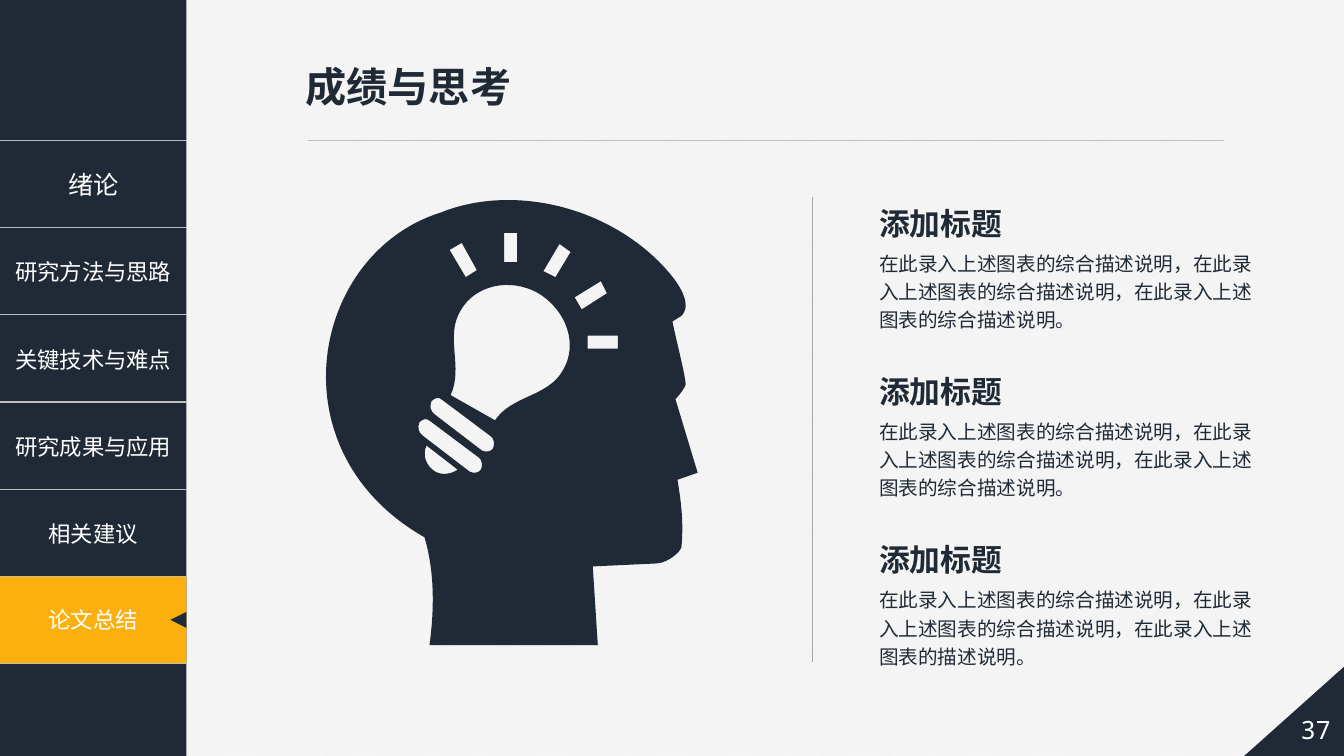
from dataclasses import dataclass

from lxml import etree
from pptx import Presentation
from pptx import util as u
from pptx.dml.color import RGBColor
from pptx.enum import dml, shapes, text
from pptx.oxml.ns import qn

NAVY, AMBER, WHITE = "202A36", "FCB00F", "FFFFFF"
PALE, SILVER, STEEL = "F2F2F2", "BFBFBF", "9DA8B1"
CJK = "Noto Sans CJK SC"
SIDEBAR_WIDTH = 1.85
ROW_TOP, ROW_HEIGHT = 1.39, 0.866

Point = tuple[float, float]
Segment = tuple[float, ...]
Box = tuple[float, float, float, float]


@dataclass(frozen=True)
class Section:
    heading: str
    body: str


@dataclass(frozen=True)
class Contour:
    """Closed outline: two numbers give a line, six a cubic curve."""
    start: Point
    segments: list[Segment]

    def shifted(self, dx: float, dy: float) -> "Contour":
        moved = [tuple(v + (dy if i % 2 else dx) for i, v in enumerate(segment))
                 for segment in self.segments]
        return Contour((self.start[0] + dx, self.start[1] + dy), moved)

    def vertices(self) -> list[Point]:
        return [(u.Inches(x), u.Inches(y)) for segment in self.segments
                for x, y in zip(segment[::2], segment[1::2])]


CHAPTERS = ["绪论", "研究方法与思路", "关键技术与难点", "研究成果与应用", "相关建议", "论文总结"]
PHRASE = "在此录入上述图表的综合描述说明，"
SECTIONS = [
    Section("添加标题", PHRASE * 2 + "在此录入上述图表的综合描述说明。"),
    Section("添加标题", PHRASE * 2 + "在此录入上述图表的综合描述说明。"),
    Section("添加标题", PHRASE * 2 + "在此录入上述图表的描述说明。"),
]

HEAD = Contour((4.26, 6.4), [
    (4.31, 6.04, 4.31, 5.66, 4.21, 5.33), (2.7, 4.47, 3.09, 2.51, 4.37, 2.11),
    (5.03, 1.84, 5.94, 2.01, 6.53, 2.59), (6.96, 3.02, 6.75, 3.14, 6.75, 3.14),
    (6.67, 3.19), (6.71, 3.39, 6.81, 3.77, 6.8, 3.82),
    (6.77, 3.89, 6.7, 3.96, 6.7, 3.96), (6.92, 4.69), (6.72, 4.76),
    (6.76, 5, 6.78, 5.19, 6.76, 5.42), (6.76, 5.47, 6.63, 5.58, 6.52, 5.59),
    (5.88, 5.62), (5.93, 6.4)])
BULB = Contour((5.34, 2.91), [
    (5.06, 2.75, 4.71, 2.83, 4.57, 3.08), (4.41, 3.34, 4.6, 3.64, 4.47, 3.92),
    (4.91, 4.17), (5.08, 3.92, 5.43, 3.94, 5.58, 3.68),
    (5.74, 3.42, 5.62, 3.08, 5.34, 2.91)])
SCREW_BAND = Contour((4.75, 4.54), [
    (4.27, 4.18), (4.23, 4.14, 4.19, 4.16, 4.16, 4.19),
    (4.14, 4.24, 4.15, 4.29, 4.19, 4.32), (4.66, 4.68),
    (4.7, 4.7, 4.75, 4.69, 4.77, 4.66), (4.79, 4.62, 4.78, 4.56, 4.75, 4.54)])
BULB_TIP = Contour((4.23, 4.42), [
    (4.19, 4.51, 4.22, 4.62, 4.32, 4.68), (4.39, 4.72, 4.48, 4.7, 4.54, 4.66)])
RAYS = [
    Contour((4.73, 2.68), [(4.58, 2.41), (4.46, 2.48), (4.62, 2.75)]),
    Contour((5.13, 2.6), [(5.13, 2.31), (5, 2.31), (5, 2.6)]),
    Contour((5.51, 2.75), [(5.66, 2.5), (5.55, 2.42), (5.39, 2.69)]),
    Contour((5.77, 3.07), [(6.02, 2.91), (5.96, 2.79), (5.7, 2.95)]),
    Contour((5.83, 3.46), [(6.13, 3.46), (6.13, 3.33), (5.83, 3.33)]),
]


def color(hex_value: str) -> RGBColor:
    return RGBColor.from_string(hex_value)


def write(frame, content: str, *, size: float, fill: str = NAVY, font: str = CJK,
          bold: bool = False, align=text.PP_ALIGN.LEFT, spacing: float = 1.0) -> None:
    paragraph = frame.paragraphs[0]
    paragraph.alignment = align
    paragraph.line_spacing = spacing
    run = paragraph.add_run()
    run.text = content
    run.font.size, run.font.bold, run.font.name = u.Pt(size), bold, font
    run.font.color.rgb = color(fill)
    east_asian = etree.SubElement(run.font._element, qn("a:ea"))
    east_asian.set("typeface", font)


def add_text(slide, box: Box, content: str, *, wrap: bool = True, **style) -> None:
    frame = slide.shapes.add_textbox(*map(u.Inches, box)).text_frame
    frame.word_wrap = wrap
    write(frame, content, **style)


def paint(shape, fill: str) -> None:
    shape.shadow.inherit = False
    shape.fill.solid()
    shape.fill.fore_color.rgb = color(fill)
    shape.line.fill.background()


def add_block(slide, kind, box: Box, fill: str = NAVY):
    shape = slide.shapes.add_shape(kind, *map(u.Inches, box))
    paint(shape, fill)
    return shape


def add_rule(slide, start: Point, end: Point, line_color: str, width: float) -> None:
    rule = slide.shapes.add_connector(
        shapes.MSO_CONNECTOR.STRAIGHT, *map(u.Inches, (*start, *end)))
    rule.line.color.rgb = color(line_color)
    rule.line.width = u.Pt(width)
    etree.SubElement(rule._element.spPr, qn("a:effectLst"))


def set_row_borders(cell) -> None:
    properties = cell._tc.get_or_add_tcPr()
    for position, side in enumerate("LRTB"):
        border = etree.Element(qn(f"a:ln{side}"), w=str(u.Pt(1)))
        if side in "TB":
            solid = etree.SubElement(border, qn("a:solidFill"))
            etree.SubElement(solid, qn("a:srgbClr"), val=SILVER)
        else:
            etree.SubElement(border, qn("a:noFill"))
        properties.insert(position, border)


def add_navigation(slide) -> None:
    add_block(slide, shapes.MSO_SHAPE.RECTANGLE, (0, 0, SIDEBAR_WIDTH, 7.5))
    table = slide.shapes.add_table(
        len(CHAPTERS), 1, 0, u.Inches(ROW_TOP), u.Inches(SIDEBAR_WIDTH),
        u.Inches(ROW_HEIGHT * len(CHAPTERS))).table
    centred = {"fill": WHITE, "align": text.PP_ALIGN.CENTER}
    for index, chapter in enumerate(CHAPTERS):
        table.rows[index].height = u.Inches(ROW_HEIGHT)
        cell = table.cell(index, 0)
        cell.fill.background()
        cell.vertical_anchor = text.MSO_ANCHOR.MIDDLE
        set_row_borders(cell)
        write(cell.text_frame, chapter, size=16 if index else 18, **centred)
    current = add_block(slide, shapes.MSO_SHAPE.RECTANGLE,
                        (0, 5.72, SIDEBAR_WIDTH, 0.86), AMBER)
    current.text_frame.vertical_anchor = text.MSO_ANCHOR.MIDDLE
    write(current.text_frame, CHAPTERS[-1], size=16, **centred)
    pointer = add_block(slide, shapes.MSO_SHAPE.ISOSCELES_TRIANGLE, (1.69, 6.07, 0.16, 0.16))
    pointer.rotation = 270


def bend(shape, contours: list[Contour]) -> None:
    """Turn each run of three vertices that belongs to a curve into one cubic."""
    vertices = list(shape._element.iter(qn("a:lnTo")))
    position = 0
    for segment in (s for contour in contours for s in contour.segments):
        count = len(segment) // 2
        group = vertices[position:position + count]
        position += count
        if count == 3:
            curve = etree.Element(qn("a:cubicBezTo"))
            group[0].addprevious(curve)
            for vertex in group:
                curve.append(vertex[0])
                vertex.getparent().remove(vertex)


def add_head(slide) -> None:
    contours = [HEAD, BULB, SCREW_BAND, SCREW_BAND.shifted(0.12, -0.21), BULB_TIP, *RAYS]
    builder = slide.shapes.build_freeform(*map(u.Inches, HEAD.start))
    for contour in contours:
        if contour is not HEAD:
            builder.move_to(*map(u.Inches, contour.start))
        # The builder closes without an extra vertex.
        builder.add_line_segments(contour.vertices(), close=True)
    head = builder.convert_to_shape()
    bend(head, contours)
    paint(head, NAVY)


def add_page_number(slide) -> None:
    corner = add_block(slide, shapes.MSO_SHAPE.RIGHT_TRIANGLE, (12.33, 6.58, 1.04, 0.93))
    corner._element.spPr.find(qn("a:xfrm")).set("flipH", "1")
    add_text(slide, (12.77, 7.04, 0.56, 0.4), "37", wrap=False, size=18, fill=WHITE,
             font="Noto Sans Mono", align=text.PP_ALIGN.CENTER)


def add_title(slide) -> None:
    title = slide.shapes.title
    title.left, title.top, title.width, title.height = map(u.Inches, (2.93, 0.56, 2.26, 0.59))
    frame = title.text_frame
    frame.word_wrap = False
    frame.auto_size = text.MSO_AUTO_SIZE.NONE
    frame.vertical_anchor = text.MSO_ANCHOR.TOP
    write(frame, "成绩与思考", size=29.4, font="Arial", bold=True)


def main() -> None:
    presentation = Presentation()
    presentation.slide_width, presentation.slide_height = u.Inches(13.33), u.Inches(7.5)
    slide = presentation.slides.add_slide(presentation.slide_layouts[5])
    background = slide.background.fill
    background.patterned()
    background.pattern = dml.MSO_PATTERN.LIGHT_UPWARD_DIAGONAL
    background.fore_color.rgb, background.back_color.rgb = color(WHITE), color(PALE)

    add_title(slide)
    add_navigation(slide)
    add_rule(slide, (3.05, ROW_TOP), (12.14, ROW_TOP), SILVER, 0.5)
    add_page_number(slide)
    add_rule(slide, (8.06, 1.95), (8.06, 6.57), STEEL, 1)
    for index, section in enumerate(SECTIONS):
        top = 1.98 + 1.67 * index
        add_text(slide, (8.62, top, 1.44, 0.47), section.heading, wrap=False, size=22, bold=True)
        add_text(slide, (8.62, top + 0.42, 3.96, 0.95), section.body, size=14, spacing=1.2)
    add_head(slide)
    presentation.save("out.pptx")


if __name__ == "__main__":
    main()
